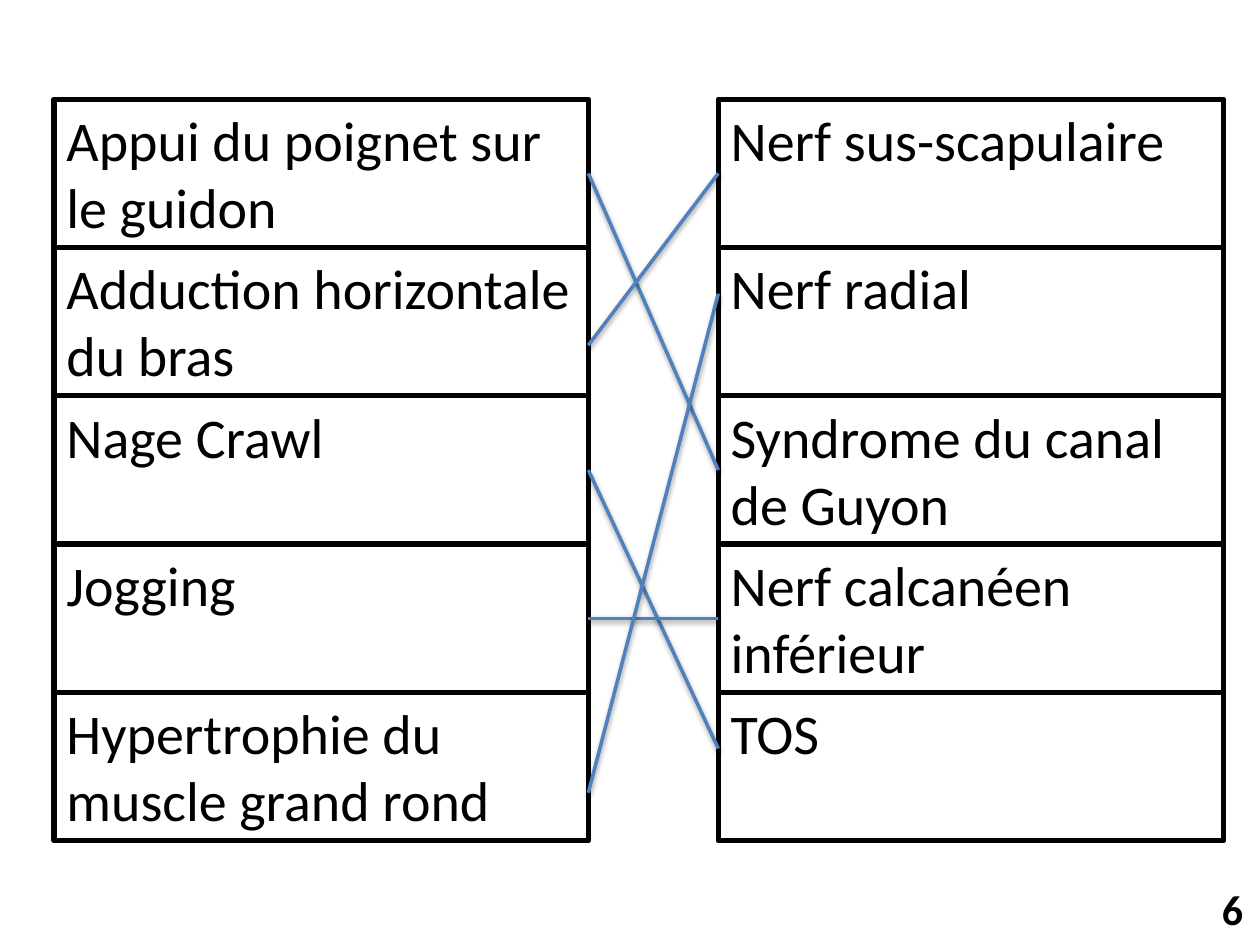
"""Build a matching exercise slide linking sporting causes to nerve syndromes."""
from dataclasses import dataclass

from lxml.etree import SubElement
from pptx import Presentation
from pptx.dml.color import RGBColor
from pptx.enum.shapes import MSO_CONNECTOR, MSO_SHAPE
from pptx.enum.text import MSO_ANCHOR, PP_ALIGN
from pptx.oxml.ns import qn
from pptx.util import Cm, Pt


@dataclass(frozen=True)
class Theme:
    font: str = "Calibri"
    ink: RGBColor = RGBColor(0, 0, 0)
    link: RGBColor = RGBColor(0x4F, 0x81, 0xBD)
    body: Pt = Pt(32)
    number: Pt = Pt(24)
    border: Pt = Pt(3)
    link_width: Pt = Pt(2)


theme = Theme()


def add_run(p, text, size, bold=False):
    r = p.add_run()
    r.text = text
    r.font.name = theme.font
    r.font.size = size
    r.font.bold = bold
    r.font.color.rgb = theme.ink


def add_shadow(line):
    effects = SubElement(line._element.spPr, qn("a:effectLst"))
    shadow = SubElement(effects, qn("a:outerShdw"), blurRad=str(Pt(3.1)),
                        dist=str(Pt(1.6)), dir="5400000", rotWithShape="0")
    color = SubElement(shadow, qn("a:srgbClr"), val="000000")
    SubElement(color, qn("a:alpha"), val="38000")


prs = Presentation()
prs.slide_width, prs.slide_height = Cm(25.4), Cm(19.05)
s = prs.slides.add_slide(prs.slide_layouts[6])

sp = s.shapes.add_textbox(Cm(24.38), Cm(17.68), Cm(0.94), Cm(1.27))
sp.text_frame.word_wrap = False
add_run(sp.text_frame.paragraphs[0], "6", theme.number, bold=True)

TOP, ROW = 2.0, 2.99
LEFT_EDGE, RIGHT_EDGE = 11.86, 14.48
columns = [
    (1.09, 10.77, [
        ["Appui du poignet sur \vle guidon"],
        ["Adduction horizontale", "du bras"],
        ["Nage Crawl"],
        ["Jogging"],
        ["Hypertrophie du", "muscle grand rond"],
    ]),
    (RIGHT_EDGE, 10.19, [
        ["Nerf sus-scapulaire"],
        ["Nerf radial"],
        ["Syndrome du canal \vde Guyon"],
        ["Nerf calcanéen\vinférieur"],
        ["TOS"],
    ]),
]

boxes = []
for left, width, cells in columns:
    column = []
    for row, paragraphs in enumerate(cells):
        sp = s.shapes.add_shape(MSO_SHAPE.RECTANGLE, Cm(left), Cm(TOP + row * ROW), Cm(width), Cm(ROW))
        sp.shadow.inherit = False
        sp.fill.background()
        sp.line.color.rgb = theme.ink
        sp.line.width = theme.border
        tf = sp.text_frame
        tf.word_wrap = True
        tf.vertical_anchor = MSO_ANCHOR.TOP
        for i, paragraph in enumerate(paragraphs):
            p = tf.add_paragraph() if i else tf.paragraphs[0]
            p.alignment = PP_ALIGN.LEFT
            for j, text in enumerate(paragraph.split("\v")):
                if j:
                    p.add_line_break()
                add_run(p, text, theme.body)
        column.append(sp)
    boxes.append(column)

causes, syndromes = boxes
middles = [TOP + (row + 0.5) * ROW for row in range(5)]
links = [
    (0, 2, None, None),
    (1, 0, 6.96, None),
    (2, 4, None, 15.09),
    (3, 3, None, None),
    (4, 1, 15.98, 5.92),
]
for cause, syndrome, start, end in links:
    line = s.shapes.add_connector(MSO_CONNECTOR.STRAIGHT,
                                  Cm(LEFT_EDGE), Cm(start or middles[cause]),
                                  Cm(RIGHT_EDGE), Cm(end or middles[syndrome]))
    if start is None:
        line.begin_connect(causes[cause], 3)
    if end is None:
        line.end_connect(syndromes[syndrome], 1)
    line.line.color.rgb = theme.link
    line.line.width = theme.link_width
    add_shadow(line)

prs.save("out.pptx")
